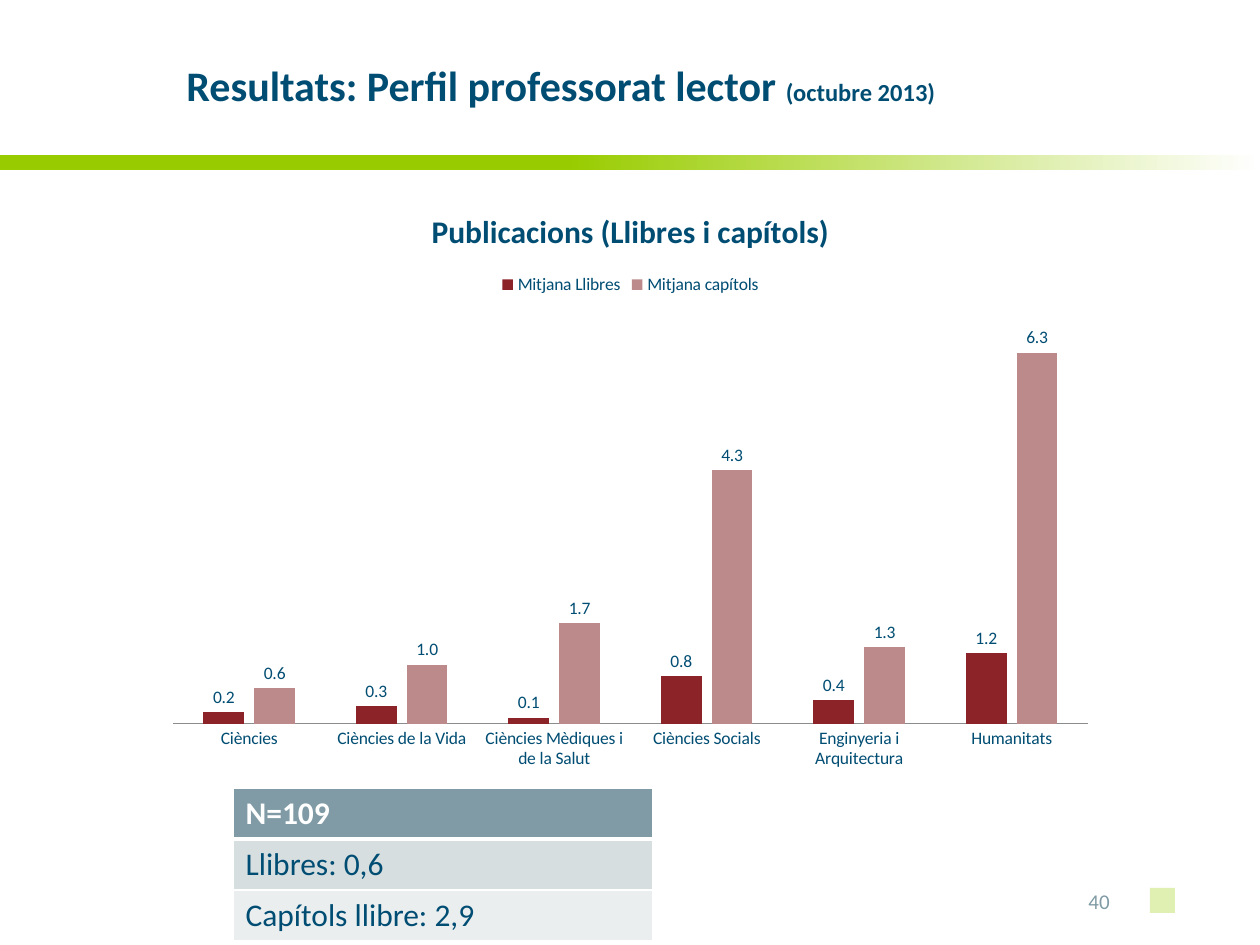
from lxml import etree
from pptx import Presentation
from pptx.chart.data import CategoryChartData
from pptx.dml.color import RGBColor
from pptx.enum.chart import XL_CHART_TYPE, XL_LABEL_POSITION, XL_LEGEND_POSITION, XL_TICK_MARK
from pptx.enum.shapes import MSO_SHAPE
from pptx.enum.text import MSO_ANCHOR
from pptx.oxml import parse_xml
from pptx.oxml.ns import nsdecls, qn
from pptx.util import Pt

PX = 914400 / 126
COLORS = {
    "navy": "004D73", "slate": "809BA5", "lime": "99CC00", "white": "FFFFFF",
    "red": "8C2329", "rose": "BC8A8B", "axis": "8C8C8C",
    "mist": "D6DEDF", "pale": "EAEEEF",
}


def box(*px):
    return [round(n * PX) for n in px]


def style(font, size, color, bold=False):
    font.name = "Calibri"
    font.size = Pt(size)
    font.bold = bold
    font.color.rgb = RGBColor.from_string(COLORS[color])


deck = Presentation()
deck.slide_width, deck.slide_height = box(1260, 945)
slide = deck.slides.add_slide(deck.slide_layouts[6])
shapes = slide.shapes

# Green band and page marker
band = shapes.add_shape(MSO_SHAPE.RECTANGLE, *box(0, 155, 1260, 15))
band.fill.gradient()
band.fill.gradient_angle = 0
for stop, place, color in zip(band.fill.gradient_stops, (0.45, 1), ("lime", "white")):
    stop.position = place
    stop.color.rgb = RGBColor.from_string(COLORS[color])
mark = shapes.add_shape(MSO_SHAPE.RECTANGLE, *box(1150, 888, 25, 25))
mark.fill.solid()
mark.fill.fore_color.rgb = RGBColor.from_string(COLORS["lime"])
tint = mark.fill._xPr.find(qn("a:solidFill"))[0]
etree.SubElement(tint, qn("a:alpha"), val="30000")
for shape in (band, mark):
    shape.line.fill.background()
    shape.shadow.inherit = False

# Title and page number
texts = [
    (box(174, 45, 1071, 80), [("Resultats: Perfil professorat lector ", 24), ("(octubre 2013)", 14)],
     "navy", True),
    (box(1076, 876, 69, 50), [("40", 12)], "slate", False),
]
for place, runs, color, bold in texts:
    frame = shapes.add_textbox(*place).text_frame
    frame.word_wrap = True
    frame.vertical_anchor = MSO_ANCHOR.MIDDLE
    for text, size in runs:
        run = frame.paragraphs[0].add_run()
        run.text = text
        style(run.font, size, color, bold)

# Chart of books and chapters
data = CategoryChartData(number_format="0.0")
data.categories = ["Ciències", "Ciències de la Vida", "Ciències Mèdiques i de la Salut",
                   "Ciències Socials", "Enginyeria i Arquitectura", "Humanitats"]
data.add_series("Mitjana Llibres", (0.2, 0.3, 0.1, 0.8, 0.4, 1.2))
data.add_series("Mitjana capítols", (0.6, 1.0, 1.7, 4.3, 1.3, 6.3))
chart = shapes.add_chart(XL_CHART_TYPE.COLUMN_CLUSTERED, *box(154, 185, 953, 595), data).chart
style(chart.font, 10, "navy")
chart.has_title = True
head = chart.chart_title.text_frame
head.text = "Publicacions (Llibres i capítols)"
style(head.paragraphs[0].runs[0].font, 18, "navy", True)
chart.has_legend = True
chart.legend.position = XL_LEGEND_POSITION.TOP
chart.legend.include_in_layout = False

base = chart.category_axis
base.major_tick_mark = XL_TICK_MARK.NONE
base.format.line.color.rgb = RGBColor.from_string(COLORS["axis"])
scale = chart.value_axis
scale.visible = False
scale.has_major_gridlines = False
scale.minimum_scale, scale.maximum_scale = 0, 7

plot = chart.plots[0]
plot.vary_by_categories = False
plot.gap_width, plot.overlap = 150, -25
for series, color in zip(plot.series, ("red", "rose")):
    series.format.fill.solid()
    series.format.fill.fore_color.rgb = RGBColor.from_string(COLORS[color])
    labels = series.data_labels
    labels.show_value = True
    labels.number_format = "0.0"
    labels.number_format_is_linked = False
    labels.position = XL_LABEL_POSITION.OUTSIDE_END

# Table of averages
rows = [("N=109", "slate", "white"), ("Llibres: 0,6", "mist", "navy"),
        ("Capítols llibre: 2,9", "pale", "navy")]
table = shapes.add_table(len(rows), 1, *box(233, 788, 420, 153)).table
for i, (text, fill, ink) in enumerate(rows):
    cell = table.cell(i, 0)
    cell.text_frame.text = text
    style(cell.text_frame.paragraphs[0].runs[0].font, 18, ink, i == 0)
    # Borders come before the fill in the cell properties
    props = cell._tc.get_or_add_tcPr()
    for side in "LRTB":
        thick = (i, side) in ((0, "B"), (1, "T"))
        props.append(parse_xml(
            f'<a:ln{side} {nsdecls("a")} w="{Pt(3 if thick else 1)}"><a:solidFill>'
            f'<a:srgbClr val="{COLORS["white"]}"/></a:solidFill></a:ln{side}>'))
    cell.fill.solid()
    cell.fill.fore_color.rgb = RGBColor.from_string(COLORS[fill])

deck.save("out.pptx")
